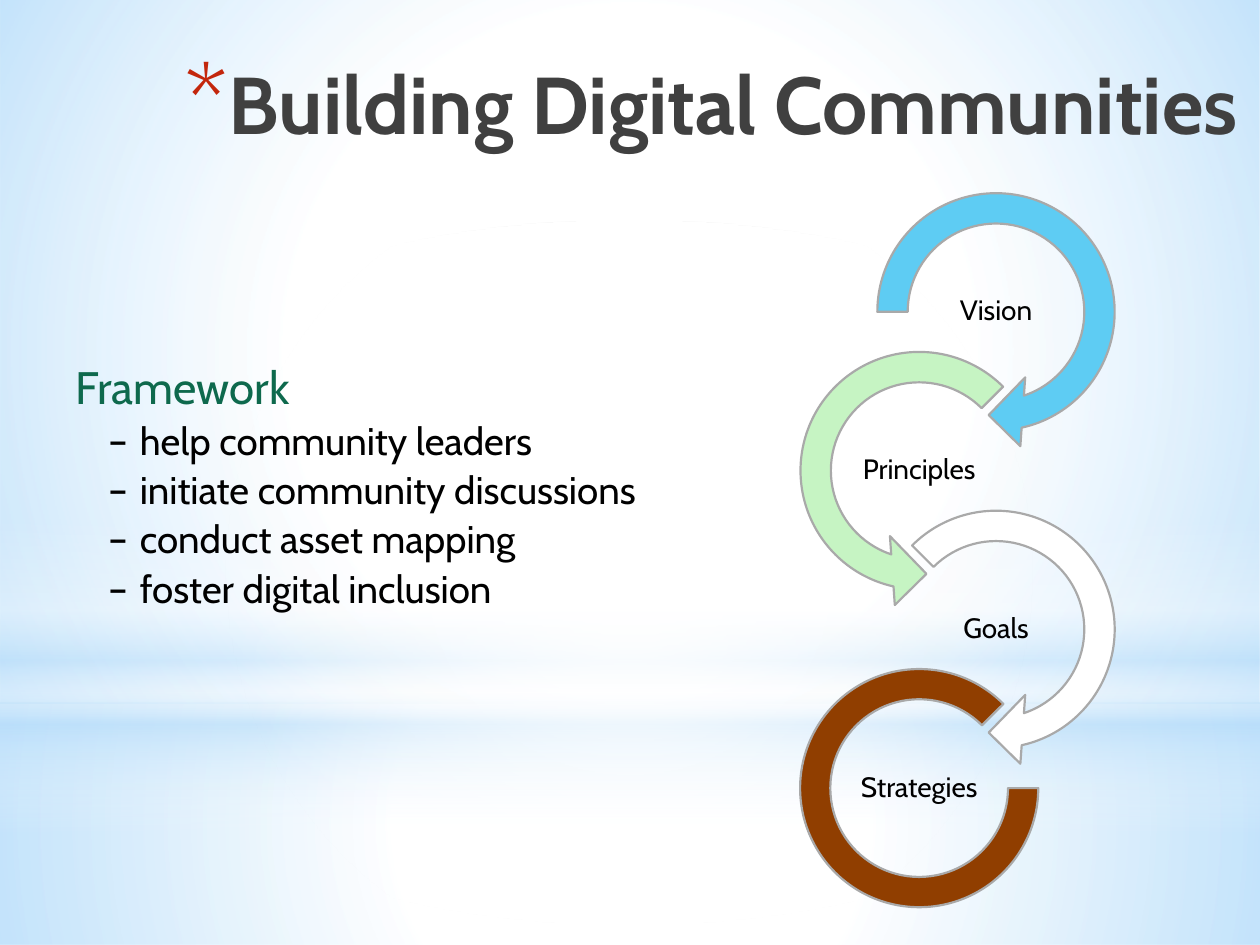
from lxml import etree
from pptx import Presentation
from pptx.dml.color import RGBColor
from pptx.enum.shapes import MSO_SHAPE
from pptx.enum.text import MSO_ANCHOR, MSO_AUTO_SIZE, PP_ALIGN
from pptx.oxml.ns import nsdecls, qn
from pptx.oxml import parse_xml
from pptx.util import Inches, Pt

RECT, OVAL = MSO_SHAPE.RECTANGLE, MSO_SHAPE.OVAL
RIGHT_ARC, LEFT_ARC = MSO_SHAPE.CIRCULAR_ARROW, MSO_SHAPE.LEFT_CIRCULAR_ARROW
RING = MSO_SHAPE.BLOCK_ARC
MIDDLE, TOP, NO_FIT = MSO_ANCHOR.MIDDLE, MSO_ANCHOR.TOP, MSO_AUTO_SIZE.NONE
CENTER, RIGHT = PP_ALIGN.CENTER, PP_ALIGN.RIGHT

FONT = "Cabin"
COLORS = {
    "white": "FFFFFF", "sky": "B4DCFA", "title": "404040", "star": "C3260C",
    "heading": "0E694D", "text": "000000", "outline": "A9A9A9",
    "vision": "5ECCF3", "principles": "C6F4C3", "goals": "FFFFFF",
    "strategies": "903E00",
}

TITLE = "Building Digital Communities"
HEADING = "Framework"
ACTIONS = [
    "help community leaders",
    "initiate community discussions",
    "conduct asset mapping",
    "foster digital inclusion",
]
STAGES = [
    ("Vision", RIGHT_ARC, (0.11, 11.42, 45, 108, 0.125), 0),
    ("Principles", LEFT_ARC, (0.11, 11.42, 63, 189, 0.125), 0),
    ("Goals", RIGHT_ARC, (0.11, 11.42, 45, 135, 0.125), 0),
    ("Strategies", RING, (0, 189, 0.127), 0.15),
]
RADIAL = '<a:path path="circle"><a:fillToRect l="50000" t="50000" r="50000" b="50000"/></a:path>'
VERTICAL = '<a:lin ang="5400000" scaled="0"/>'
BACKDROP = [
    (RECT, 5.58, 1.92, RADIAL, [(0, "white", 91), (37, "white", 76), (100, "sky", 79)]),
    (RECT, 0, 5.58, RADIAL, [(0, "white", 89), (48, "white", 62), (100, "sky", 79)]),
    (RECT, 4.12, 2.5, VERTICAL, [(0, "white", 0), (29, "white", 30), (45, "sky", 40),
                                 (55, "white", 26), (65, "sky", 60), (100, "white", 0)]),
    (OVAL, 1.75, 5.58, RADIAL, [(0, "white", 100), (56, "white", 0)]),
]
ARC, LABEL_W, LABEL_H = 2.19, 1.22, 0.61
COLUMNS, FIRST_ROW, ROW_STEP = (6.81, 6.2), 1.38, 1.26


def color(name):
    return RGBColor.from_string(COLORS[name])


def box(left, top, width, height):
    return [Inches(v) for v in (left, top, width, height)]


def move(shape, *place):
    shape.left, shape.top, shape.width, shape.height = box(*place)


def style(paragraph, size, name):
    paragraph.font.name = FONT
    paragraph.font.size = Pt(size)
    paragraph.font.color.rgb = color(name)


def set_bullet(paragraph, margin, indent, char=None, tint=None, scale=None):
    props = paragraph._p.get_or_add_pPr()
    props.set("marL", str(Inches(margin)))
    props.set("indent", str(Inches(indent)))
    marks = []
    if tint:
        marks.append(f'<a:buClr {nsdecls("a")}><a:srgbClr val="{COLORS[tint]}"/></a:buClr>')
    if scale:
        marks.append(f'<a:buSzPct {nsdecls("a")} val="{scale * 1000}"/>')
    if char:
        marks.append(f'<a:buFont {nsdecls("a")} typeface="{FONT}"/>')
        marks.append(f'<a:buChar {nsdecls("a")} char="{char}"/>')
    else:
        marks.append(f'<a:buNone {nsdecls("a")}/>')
    defaults = props.find(qn("a:defRPr"))
    for mark in marks:
        if defaults is None:
            props.append(parse_xml(mark))
        else:
            defaults.addprevious(parse_xml(mark))


def fill_gradient(shape, stops, direction):
    shape.fill.background()
    gradient = parse_xml(f'<a:gradFill {nsdecls("a")} rotWithShape="1"><a:gsLst/>{direction}</a:gradFill>')
    for position, name, alpha in stops:
        stop = etree.SubElement(gradient[0], qn("a:gs"), pos=str(position * 1000))
        tint = etree.SubElement(stop, qn("a:srgbClr"), val=COLORS[name])
        etree.SubElement(tint, qn("a:alpha"), val=str(alpha * 1000))
    empty = shape._element.spPr.find(qn("a:noFill"))
    empty.getparent().replace(empty, gradient)


def add_backdrop(shapes):
    for kind, top, height, direction, stops in BACKDROP:
        band = shapes.add_shape(kind, *box(0, top, 10, height))
        band.shadow.inherit = False
        band.line.fill.background()
        fill_gradient(band, stops, direction)


def add_stages(shapes):
    for row, (name, kind, adjustments, inset) in enumerate(STAGES):
        left, top = COLUMNS[row % 2], FIRST_ROW + row * ROW_STEP
        size = ARC - 2 * inset
        arc = shapes.add_shape(kind, *box(left + inset, top + inset, size, size))
        arc.shadow.inherit = False
        for i, value in enumerate(adjustments):
            arc.adjustments[i] = value
        arc.fill.solid()
        arc.fill.fore_color.rgb = color(name.lower())
        arc.line.color.rgb = color("outline")
        arc.line.width = Pt(1.25)

        label = shapes.add_textbox(*box(left + (ARC - LABEL_W) / 2,
                                        top + (ARC - LABEL_H) / 2, LABEL_W, LABEL_H))
        frame = label.text_frame
        frame.word_wrap = True
        frame.vertical_anchor = MIDDLE
        frame.margin_left = frame.margin_right = Inches(0.01)
        frame.margin_top = frame.margin_bottom = Inches(0.01)
        caption = frame.paragraphs[0]
        caption.text = name
        caption.alignment = CENTER
        caption.line_spacing = 0.9
        style(caption, 16, "text")


def write_title(title):
    move(title, 0.38, 0.38, 9.54, 1.08)
    frame = title.text_frame
    frame.auto_size = NO_FIT
    frame.vertical_anchor = TOP
    headline = frame.paragraphs[0]
    headline.text = TITLE
    headline.alignment = RIGHT
    style(headline, 46, "title")
    headline.font.bold = True
    set_bullet(headline, 0.35, -0.35, "*", "star", 128)


def write_framework(body):
    move(body, 0.5, 2.85, 5.5, 2.38)
    frame = body.text_frame
    frame.auto_size = NO_FIT
    for i, line in enumerate([HEADING] + ACTIONS):
        paragraph = frame.add_paragraph() if i else frame.paragraphs[0]
        paragraph.text = line
        paragraph.line_spacing = 0.9
        if i:
            paragraph.level = 1
            style(paragraph, 22, "text")
            set_bullet(paragraph, 0.51, -0.25, "–")
        else:
            style(paragraph, 26, "heading")
            set_bullet(paragraph, 0, 0)


def main():
    deck = Presentation()
    deck.slide_width, deck.slide_height = Inches(10), Inches(7.5)
    slide = deck.slides.add_slide(deck.slide_layouts[1])
    title, body = slide.placeholders
    add_backdrop(slide.shapes)
    for placeholder in (title, body):
        slide.shapes._spTree.append(placeholder._element)
    write_title(title)
    add_stages(slide.shapes)
    write_framework(body)
    deck.save("out.pptx")


if __name__ == "__main__":
    main()
